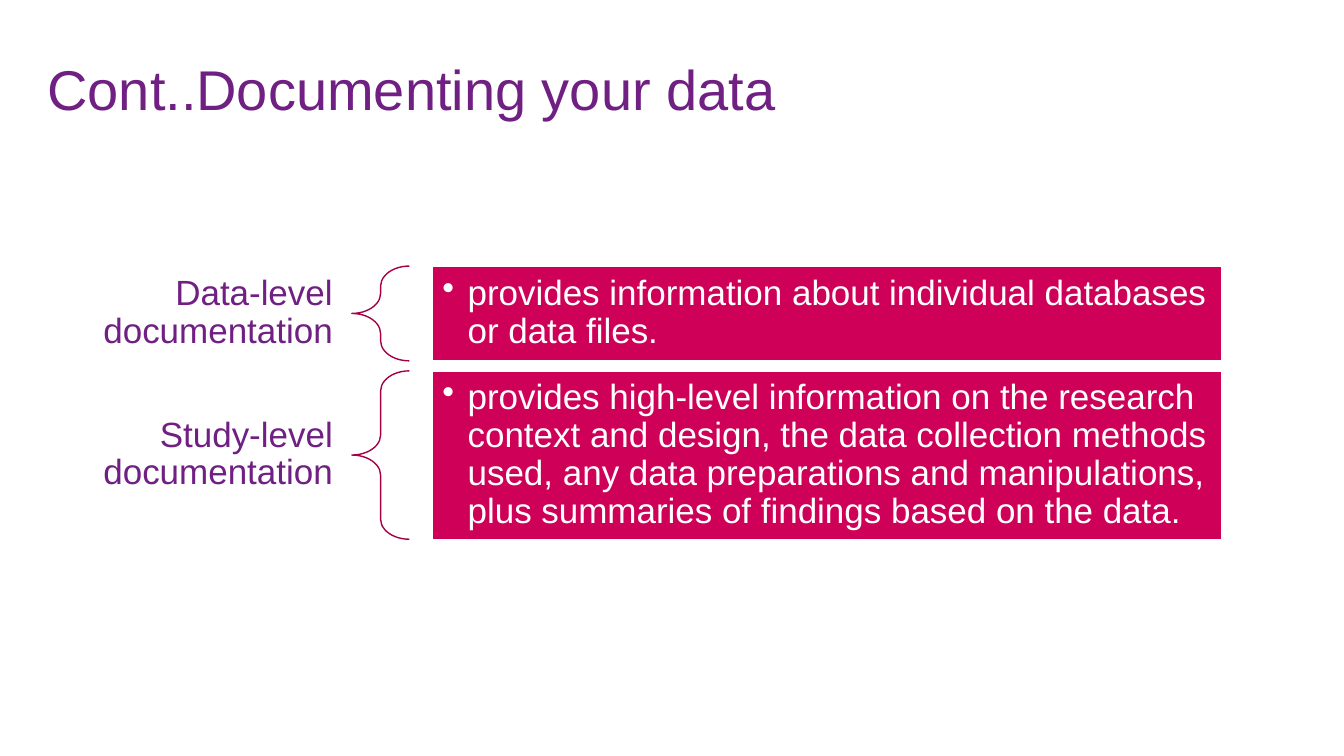
from lxml.etree import SubElement
from pptx import Presentation
from pptx.dml.color import RGBColor
from pptx.enum.shapes import MSO_SHAPE
from pptx.enum.text import MSO_ANCHOR, MSO_AUTO_SIZE, PP_ALIGN
from pptx.oxml.ns import qn
from pptx.util import Pt

PX = 9144  # EMU per px, 100 px to the inch
PURPLE = RGBColor(0x70, 0x20, 0x82)
PINK = RGBColor(0xCE, 0x00, 0x57)
DARK_PINK = RGBColor(0xA5, 0x00, 0x46)
WHITE = RGBColor(0xFF, 0xFF, 0xFF)
FONT = "Arial"

TITLE = "Cont..Documenting your data"
# Label, description, box of the whole row (left, top, width, height)
ROWS = [
    ("Data-level documentation",
     "provides information about individual databases or data files.",
     (62, 264, 1150, 94)),
    ("Study-level documentation",
     "provides high-level information on the research context and design, "
     "the data collection methods used, any data preparations and "
     "manipulations, plus summaries of findings based on the data.",
     (62, 368, 1150, 167)),
]
LABEL_WIDTH, LABEL_HEIGHT = 287, 86
BRACE_WIDTH, BRACE_GAP = 57, 23
BULLET_INDENT = 25


def scaled(*lengths):
    return [length * PX for length in lengths]


def write_text(shape, text, size, color, align, margins):
    frame = shape.text_frame
    frame.word_wrap = True
    frame.auto_size = MSO_AUTO_SIZE.NONE
    frame.vertical_anchor = MSO_ANCHOR.MIDDLE
    horizontal, vertical = scaled(*margins)
    frame.margin_left = frame.margin_right = horizontal
    frame.margin_top = frame.margin_bottom = vertical
    para = frame.paragraphs[0]
    para.alignment = align
    para.line_spacing = 0.9
    span = para.add_run()
    span.text = text
    span.font.name = FONT
    span.font.size = Pt(size)
    span.font.color.rgb = color
    return para


def add_bullet(para):
    properties = para._p.get_or_add_pPr()
    properties.set("marL", str(BULLET_INDENT * PX))
    properties.set("indent", str(-BULLET_INDENT * PX))
    SubElement(properties, qn("a:buChar")).set("char", "•")


def add_title(page, box):
    title = page.shapes.title
    title.left, title.top, title.width, title.height = scaled(*box)
    write_text(title, TITLE, 40, PURPLE, PP_ALIGN.LEFT, (10, 5))


def add_row(page, label_text, description, box):
    left, top, width, height = box

    # Label, centred on the row
    label_top = top + (height - LABEL_HEIGHT) // 2
    label = page.shapes.add_textbox(
        *scaled(left, label_top, LABEL_WIDTH, LABEL_HEIGHT))
    write_text(label, label_text, 25, PURPLE, PP_ALIGN.RIGHT, (19, 7))

    # Brace
    brace_left = left + LABEL_WIDTH
    brace = page.shapes.add_shape(
        MSO_SHAPE.LEFT_BRACE, *scaled(brace_left, top, BRACE_WIDTH, height))
    brace.shadow.inherit = False
    brace.adjustments[0] = 0.35
    brace.adjustments[1] = 0.5
    brace.fill.background()
    brace.line.color.rgb = DARK_PINK
    brace.line.width = Pt(1)

    # Description panel
    panel_left = brace_left + BRACE_WIDTH + BRACE_GAP
    panel = page.shapes.add_shape(
        MSO_SHAPE.RECTANGLE,
        *scaled(panel_left, top, left + width - panel_left, height))
    panel.shadow.inherit = False
    panel.fill.solid()
    panel.fill.fore_color.rgb = PINK
    panel.line.color.rgb = WHITE
    panel.line.width = Pt(1)
    add_bullet(write_text(panel, description, 25, WHITE, PP_ALIGN.LEFT, (10, 10)))


def main():
    deck = Presentation()
    deck.slide_width, deck.slide_height = scaled(1333, 750)
    page = deck.slides.add_slide(deck.slide_layouts.get_by_name("Title Only"))
    add_title(page, (37, 29, 1200, 125))
    for label_text, description, box in ROWS:
        add_row(page, label_text, description, box)
    deck.save("out.pptx")


if __name__ == "__main__":
    main()
